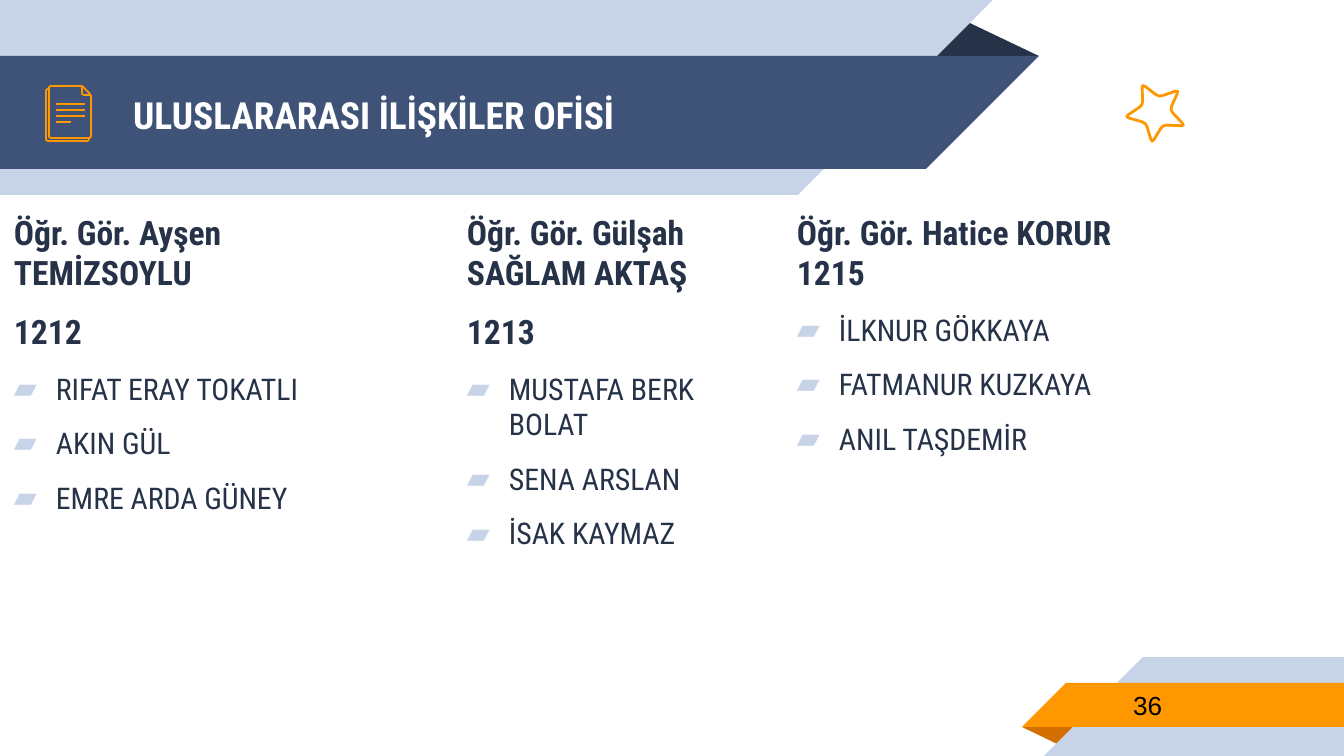
from dataclasses import dataclass
from math import hypot

from lxml import etree
from pptx import Presentation
from pptx.dml.color import RGBColor
from pptx.enum.shapes import MSO_CONNECTOR, MSO_SHAPE
from pptx.enum.text import MSO_ANCHOR
from pptx.oxml.ns import qn
from pptx.util import Pt

EMU_PER_PX = 914400 / 134.4
RECTANGLE = MSO_SHAPE.RECTANGLE
RIGHT_TRIANGLE = MSO_SHAPE.RIGHT_TRIANGLE
TRIANGLE = MSO_SHAPE.ISOSCELES_TRIANGLE
STRAIGHT = MSO_CONNECTOR.STRAIGHT
TOP, MIDDLE = MSO_ANCHOR.TOP, MSO_ANCHOR.MIDDLE

NAVY, BLUE, PALE = "263248", "3F5378", "C7D3E6"
ORANGE, BURNT, WHITE, BLACK = "FF9800", "D26F00", "FFFFFF", "000000"
FONT = "Roboto Condensed"
INSET, INDENT = 13, 42
ICON_WIDTH, STAR_WIDTH = 0.96, 1.5


@dataclass
class Band:
    kind: int
    left: int
    top: int
    width: int
    height: int
    color: str
    flip: str = ""
    rotation: int = 0


@dataclass
class Column:
    left: int
    width: int
    height: int
    headings: list[str]
    names: list[str]


BANDS = [
    Band(TRIANGLE, 925, 19, 114, 37, NAVY),
    Band(RECTANGLE, 0, 0, 798, 195, PALE),
    Band(RIGHT_TRIANGLE, 798, 0, 195, 195, PALE, "flipV"),
    Band(RECTANGLE, 0, 56, 926, 113, BLUE),
    Band(RIGHT_TRIANGLE, 926, 56, 113, 113, BLUE, "flipV"),
    Band(TRIANGLE, 1022, 727, 58, 19, BURNT, rotation=180),
    Band(RECTANGLE, 1143, 657, 201, 99, PALE),
    Band(RIGHT_TRIANGLE, 1044, 657, 99, 99, PALE, "flipH"),
    Band(RECTANGLE, 1066, 683, 278, 44, ORANGE),
    Band(RIGHT_TRIANGLE, 1022, 683, 44, 44, ORANGE, "flipH"),
]
COLUMNS = [
    Column(1, 340, 542, ["Öğr. Gör. Ayşen TEMİZSOYLU", "1212"],
           ["RIFAT ERAY TOKATLI", "AKIN GÜL", "EMRE ARDA GÜNEY"]),
    Column(454, 329, 557, ["Öğr. Gör. Gülşah SAĞLAM AKTAŞ", "1213"],
           ["MUSTAFA BERK BOLAT", "SENA ARSLAN", "İSAK KAYMAZ"]),
    Column(784, 347, 496, ["Öğr. Gör. Hatice KORUR 1215"],
           ["İLKNUR GÖKKAYA", "FATMANUR KUZKAYA", "ANIL TAŞDEMİR"]),
]
BACK_PAGE = [(89, 138), (89, 141), (46, 141), (46, 89), (49, 89)]
FRONT_PAGE = [(91, 95), (91, 138), (49, 138), (49, 86), (82, 86)]
FOLD = [(82, 86), (91, 95), (82, 95), (82, 86)]
STAR = [(1179, 90), (1170, 110), (1185, 126), (1163, 125), (1152, 143),
        (1146, 123), (1125, 117), (1143, 105), (1142, 84), (1159, 97)]


def px(length: float) -> int:
    return round(length * EMU_PER_PX)


def rgb(color: str) -> RGBColor:
    return RGBColor.from_string(color)


def add_band(slide, band: Band) -> None:
    shape = slide.shapes.add_shape(
        band.kind, px(band.left), px(band.top), px(band.width), px(band.height))
    shape.shadow.inherit = False
    shape.fill.solid()
    shape.fill.fore_color.rgb = rgb(band.color)
    shape.line.fill.background()
    shape.rotation = band.rotation
    if band.kind == TRIANGLE:
        shape.adjustments[0] = 0.32
    if band.flip:
        shape._element.spPr.find(qn("a:xfrm")).set(band.flip, "1")


def toward(start: tuple, end: tuple, distance: float) -> tuple:
    share = distance / hypot(end[0] - start[0], end[1] - start[1])
    return tuple(a + (b - a) * share for a, b in zip(start, end))


def rounded(corners: list[tuple], radius: float, closed: bool) -> list[tuple]:
    """Cut each corner into a short curve; the ends of an open line stay."""
    points = []
    for index, corner in enumerate(corners):
        if not closed and index in (0, len(corners) - 1):
            points.append(corner)
            continue
        entry = toward(corner, corners[index - 1], radius)
        leave = toward(corner, corners[(index + 1) % len(corners)], radius)
        middle = tuple((a + 2 * c + b) / 4 for a, c, b in zip(entry, corner, leave))
        points += [entry, middle, leave]
    return points


def add_outline(slide, corners: list[tuple], radius: float, width: float,
                closed: bool = False) -> None:
    points = [(px(x), px(y)) for x, y in rounded(corners, radius, closed)]
    builder = slide.shapes.build_freeform(*points[0])
    builder.add_line_segments(points[1:], close=closed)
    shape = builder.convert_to_shape()
    shape.shadow.inherit = False
    shape.fill.background()
    shape.line.color.rgb = rgb(ORANGE)
    shape.line.width = Pt(width)


def add_text_line(slide, left: int, right: int, y: int) -> None:
    line = slide.shapes.add_connector(STRAIGHT, px(left), px(y), px(right), px(y))
    line.line.color.rgb = rgb(ORANGE)
    line.line.width = Pt(ICON_WIDTH)
    etree.SubElement(line._element.spPr, qn("a:effectLst"))


def add_frame(slide, left: int, top: int, width: int, height: int, anchor=TOP):
    box = slide.shapes.add_textbox(px(left), px(top), px(width), px(height))
    frame = box.text_frame
    frame.word_wrap = True
    frame.vertical_anchor = anchor
    frame.margin_left = frame.margin_right = px(INSET)
    frame.margin_top = frame.margin_bottom = px(INSET)
    return frame


def add_span(para, text: str, size: int, color: str, bold: bool = False,
             font: str = FONT) -> None:
    span = para.add_run()
    span.text = text
    span.font.name = font
    span.font.size = Pt(size)
    span.font.bold = bold
    span.font.color.rgb = rgb(color)


def add_bullet(para) -> None:
    properties = para._p.get_or_add_pPr()
    properties.set("marL", str(px(INDENT)))
    properties.set("indent", str(-px(INDENT)))
    color = etree.SubElement(properties, qn("a:buClr"))
    etree.SubElement(color, qn("a:srgbClr"), val=PALE)
    etree.SubElement(properties, qn("a:buFont"), typeface=FONT)
    etree.SubElement(properties, qn("a:buChar"), char="▰")


def add_column(slide, column: Column) -> None:
    frame = add_frame(slide, column.left, 199, column.width, column.height)
    for index, text in enumerate(column.headings + column.names):
        para = frame.paragraphs[0] if index == 0 else frame.add_paragraph()
        para.space_after = Pt(10)
        is_heading = index < len(column.headings)
        if not is_heading:
            add_bullet(para)
        add_span(para, text, 18 if is_heading else 16, NAVY, is_heading)


def main() -> None:
    deck = Presentation()
    deck.slide_width, deck.slide_height = px(1344), px(756)
    slide = deck.slides.add_slide(deck.slide_layouts[6])
    for band in BANDS:
        add_band(slide, band)

    title = add_frame(slide, 120, 58, 773, 113, MIDDLE)
    add_span(title.paragraphs[0], "ULUSLARARASI İLİŞKİLER OFİSİ", 20, WHITE, True)
    for column in COLUMNS:
        add_column(slide, column)
    number = add_frame(slide, 1120, 682, 219, 47, MIDDLE)
    add_span(number.paragraphs[0], "36", 14, BLACK, font="Arial")

    for corners in (BACK_PAGE, FRONT_PAGE, FOLD):
        add_outline(slide, corners, 2, ICON_WIDTH)
    for index, right in enumerate((85, 85, 85, 71)):
        add_text_line(slide, 56, right, 104 + 6 * index)
    add_outline(slide, STAR, 4, STAR_WIDTH, closed=True)
    deck.save("out.pptx")


if __name__ == "__main__":
    main()
